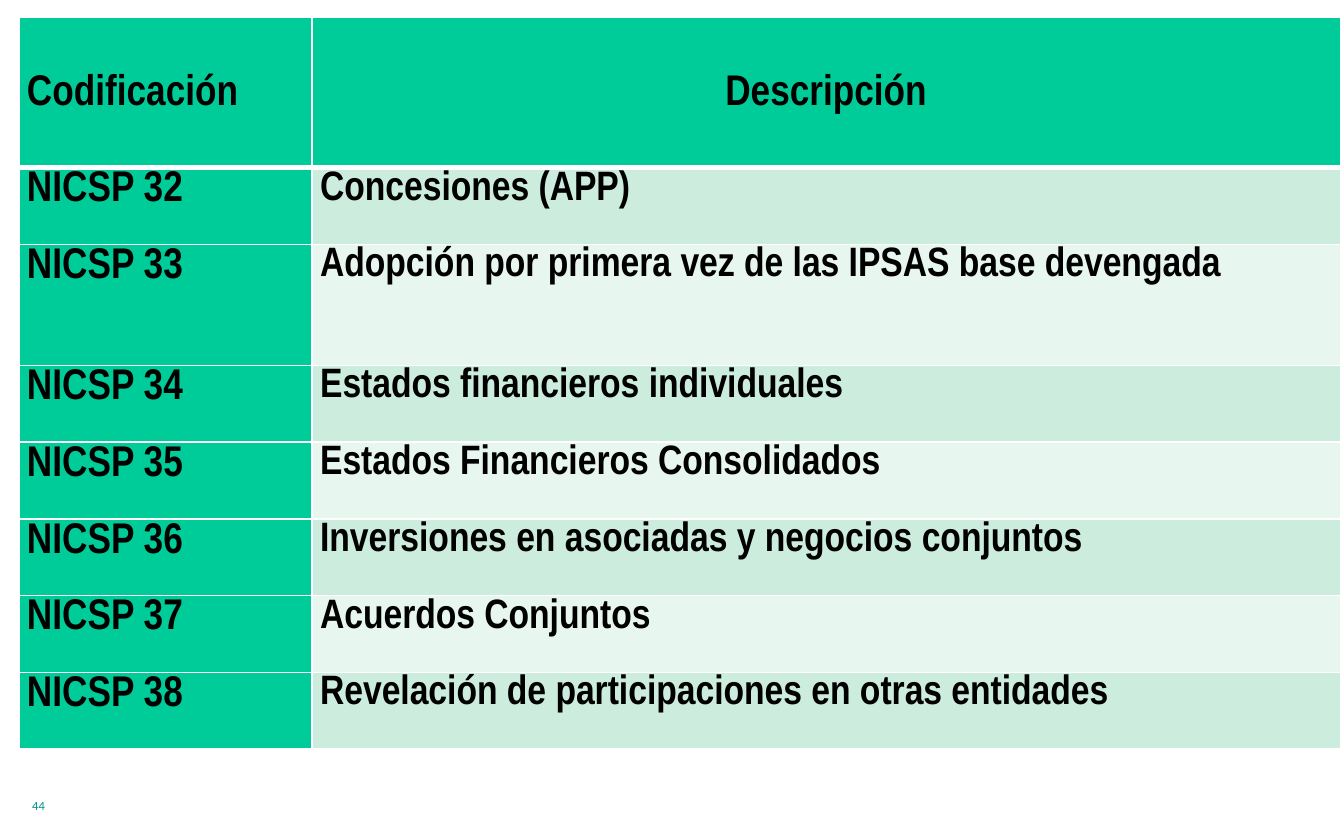
import pptx
import pptx.dml.color
import pptx.enum.text
import pptx.oxml
import pptx.oxml.ns
import pptx.util

Cm = pptx.util.Cm
Pt = pptx.util.Pt
ALIGN = pptx.enum.text.PP_ALIGN
ANCHOR = pptx.enum.text.MSO_ANCHOR

COLORS = {
    "green": "00CC99",
    "mint": "CCECDE",
    "pale": "E7F6EF",
    "line": "FFFFFF",
    "text": "000000",
    "page": "00918E",
}
HEAD = ("Codificación", "Descripción")
NORMS = [
    ("NICSP 32", "Concesiones (APP)"),
    ("NICSP 33", "Adopción por primera vez de las IPSAS base devengada"),
    ("NICSP 34", "Estados financieros individuales"),
    ("NICSP 35", "Estados Financieros Consolidados"),
    ("NICSP 36", "Inversiones en asociadas y negocios conjuntos"),
    ("NICSP 37", "Acuerdos Conjuntos"),
    ("NICSP 38", "Revelación de participaciones en otras entidades"),
]
WIDTHS = (5.54, 19.43)
HEAD_H, ROW_H, TALL_H = 2.84, 1.45, 2.29
TALL = 2  # row of NICSP 33


def color(name):
    return pptx.dml.color.RGBColor.from_string(COLORS[name])


def add_run(para, text, size, face, tint, bold=False):
    run = para.add_run()
    run.text = text
    font = run.font
    font.size, font.name, font.bold = Pt(size), face, bold
    font.color.rgb = color(tint)


def add_lines(cell, base):
    """Draw the four cell borders; base is the bottom width in points."""
    props = cell._tc.get_or_add_tcPr()
    for spot, (side, width) in enumerate(zip("LRTB", (1, 1, 1, base))):
        props.insert(spot, pptx.oxml.parse_xml(
            f'<a:ln{side} {pptx.oxml.ns.nsdecls("a")} w="{Pt(width)}">'
            f'<a:solidFill><a:srgbClr val="{COLORS["line"]}"/></a:solidFill>'
            f'</a:ln{side}>'))


def fill_cell(cell, text, size, tint, head=False, align=ALIGN.LEFT):
    cell.margin_left = cell.margin_right = Cm(0.15)
    cell.margin_top = cell.margin_bottom = 0
    cell.vertical_anchor = ANCHOR.MIDDLE if head else ANCHOR.TOP
    cell.fill.solid()
    cell.fill.fore_color.rgb = color(tint)
    add_lines(cell, 3 if head else 1)
    para = cell.text_frame.paragraphs[0]
    para.alignment = align
    para.line_spacing = 1.07
    add_run(para, text, size, "Arial Narrow", "text", True)


def add_norms(slide):
    heights = [HEAD_H] + [ROW_H] * len(NORMS)
    heights[TALL] = TALL_H
    table = slide.shapes.add_table(
        len(heights), len(WIDTHS), Cm(0.36), Cm(0.33),
        Cm(sum(WIDTHS)), Cm(sum(heights))).table
    for col, width in zip(table.columns, WIDTHS):
        col.width = Cm(width)
    for row, height in zip(table.rows, heights):
        row.height = Cm(height)

    # Header row
    for col, align in enumerate((ALIGN.LEFT, ALIGN.CENTER)):
        fill_cell(table.cell(0, col), HEAD[col], 23, "green", True, align)

    # Body rows with alternating tints
    for row, (code, title) in enumerate(NORMS, 1):
        fill_cell(table.cell(row, 0), code, 23, "green")
        fill_cell(table.cell(row, 1), title, 22, "mint" if row % 2 else "pale")


def add_page(slide, number):
    box = slide.shapes.add_textbox(Cm(0.36), Cm(14.96), Cm(5.28), Cm(0.76))
    box.text_frame.word_wrap = True
    add_run(box.text_frame.paragraphs[0], number, 6.7, "Calibri", "page")


def main():
    deck = pptx.Presentation()
    deck.slide_width, deck.slide_height = Cm(25.4), Cm(15.88)
    slide = deck.slides.add_slide(deck.slide_layouts[6])
    add_page(slide, "44")
    add_norms(slide)
    deck.save("out.pptx")


if __name__ == "__main__":
    main()
